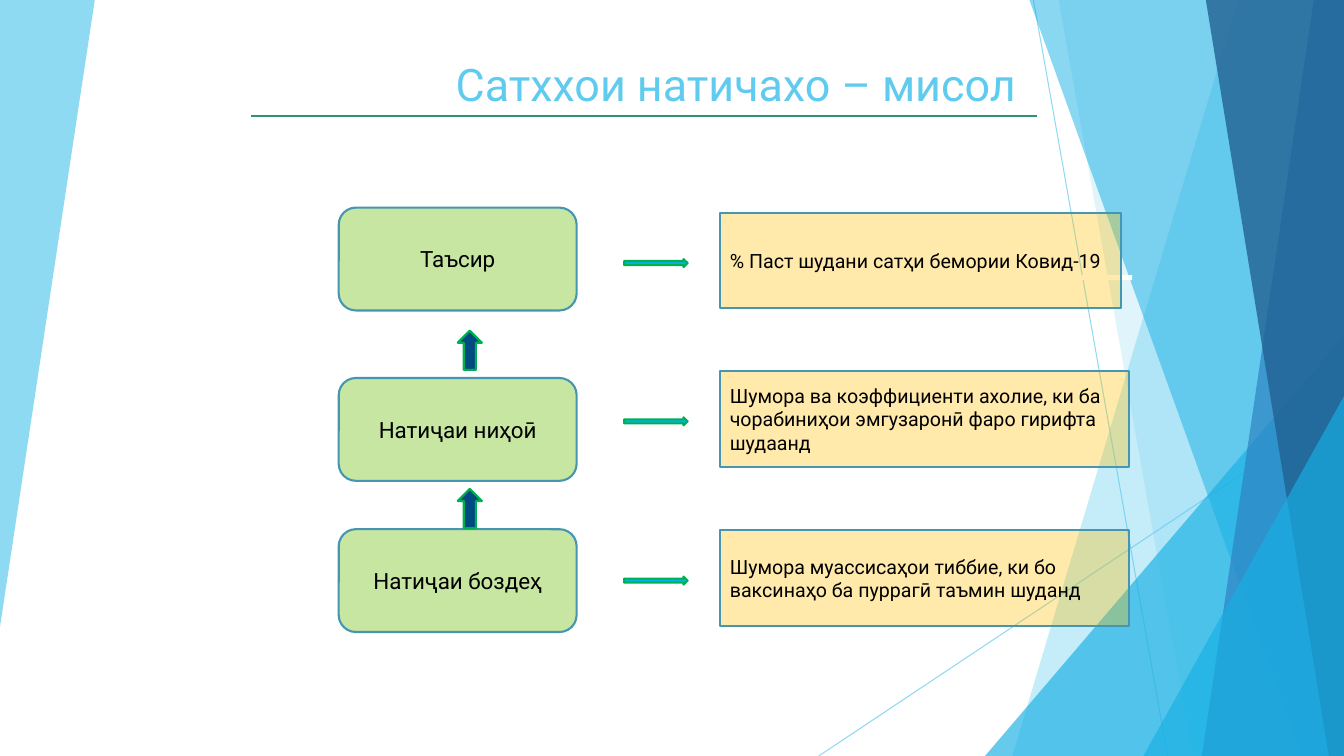
from pptx import Presentation
from pptx.dml.color import RGBColor
from pptx.enum.shapes import MSO_CONNECTOR as Connector, MSO_SHAPE as Shape
from pptx.enum.text import MSO_ANCHOR as Anchor, PP_ALIGN as Align
from pptx.oxml.ns import qn
from pptx.oxml.xmlchemy import OxmlElement
from pptx.util import Pt

PX = 9144
WIDTH, HEIGHT = 1333, 750
FONT = "Roboto"
SKY, AQUA, BLUE, NAVY = "5FCBEF", "17B0E4", "2E83C3", "226292"
STEEL, GREEN = "4696B1", "00B050"

LEVELS = [
    ("Таъсир", 206, "% Паст шудани сатҳи бемории Ковид-19", 211, 398),
    ("Натиҷаи ниҳоӣ", 375, "Шумора ва коэффициенти ахолие, ки ба чорабиниҳои "
     "эмгузаронӣ фаро гирифта шудаанд", 368, 406),
    ("Натиҷаи боздеҳ", 525, "Шумора муассисаҳои тиббие, ки бо ваксинаҳо ба "
     "пуррагӣ таъмин шуданд", 526, 406),
]


def px(*lengths):
    """Turn px lengths into EMU."""
    return [length * PX for length in lengths]


def color(value):
    """Turn a hex string into a colour."""
    return RGBColor.from_string(value)


def set_opacity(element, percent):
    """Make every colour below the element partly transparent."""
    for tint in element.iter(qn("a:srgbClr")):
        alpha = OxmlElement("a:alpha")
        alpha.set("val", str(percent * 1000))
        tint.append(alpha)


def paint(shape, fill, line=None, opacity=100):
    """Give a shape its fill, outline and opacity, without shadow."""
    shape.shadow.inherit = False
    shape.fill.solid()
    shape.fill.fore_color.rgb = color(fill)
    if opacity < 100:
        set_opacity(shape.element.spPr, opacity)
    if line:
        shape.line.color.rgb = color(line)
        shape.line.width = Pt(1.5)
    else:
        shape.line.fill.background()


def add_block(page, kind, box, fill, line=None, opacity=100):
    """Add a painted preset shape in a box."""
    block = page.shapes.add_shape(kind, *px(*box))
    paint(block, fill, line, opacity)
    return block


def add_facet(page, points, fill, opacity):
    """Add a see-through polygon."""
    builder = page.shapes.build_freeform(*points[0], scale=PX)
    builder.add_line_segments(points[1:], close=True)
    paint(builder.convert_to_shape(), fill, opacity=opacity)


def add_wedge(page, left, top, opacity=66):
    """Add a right triangle that fills the lower right corner."""
    box = left, top, WIDTH - left, HEIGHT - top
    wedge = add_block(page, Shape.ISOSCELES_TRIANGLE, box, AQUA, opacity=opacity)
    wedge.adjustments[0] = 1


def add_line(page, ends, line, width, opacity=100):
    """Add a straight line between two points."""
    rule = page.shapes.add_connector(Connector.STRAIGHT, *px(*ends))
    rule.line.color.rgb = color(line)
    rule.line.width = Pt(width)
    if opacity < 100:
        set_opacity(rule.element.spPr, opacity)
    rule.element.spPr.append(OxmlElement("a:effectLst"))


def write(shape, text, size, ink, align, anchor=Anchor.MIDDLE):
    """Write one wrapped paragraph into a shape."""
    frame = shape.text_frame
    frame.word_wrap = True
    frame.vertical_anchor = anchor
    para = frame.paragraphs[0]
    para.text = text
    para.alignment = align
    para.font.name = FONT
    para.font.size = Pt(size)
    para.font.color.rgb = color(ink)


def add_backdrop(page):
    """Draw the facets along both sides of the page."""
    def right_band(top, bottom, fill, opacity):
        corners = [(top, 0), (WIDTH, 0), (WIDTH, HEIGHT), (bottom, HEIGHT)]
        add_facet(page, corners, fill, opacity)

    add_facet(page, [(0, 0), (94, 0), (0, 622)], SKY, 70)
    add_line(page, (1025, 0, 1158, HEIGHT), SKY, 0.75, 70)
    add_line(page, (WIDTH, 403, 812, HEIGHT), SKY, 0.75, 70)
    right_band(1228, 1004, SKY, 36)
    right_band(1050, 1183, SKY, 20)
    add_wedge(page, 977, 333)
    right_band(1021, 1291, AQUA, 50)
    right_band(1303, 1192, BLUE, 70)
    right_band(1196, 1318, NAVY, 80)
    add_wedge(page, 1134, 393)


def add_title(page, left, top, width, height):
    """Add the title with the rule below it."""
    title = page.shapes.add_textbox(*px(left, top, width, height))
    title.text_frame.margin_right = 21 * PX
    write(title, "Сатххои натичахо – мисол", 32, SKY, Align.RIGHT, Anchor.BOTTOM)
    base = top + height
    add_line(page, (left + 12, base, left + width, base), "2E946B", 1)


def add_levels(page, left):
    """Add the result levels, their examples and the arrows between."""
    add_block(page, Shape.RECTANGLE, (left - 16, 273, 803, 5), "FFFFFF")
    for name, name_top, example, example_top, example_width in LEVELS:
        level = add_block(page, Shape.ROUNDED_RECTANGLE,
                          (left, name_top, 236, 102), "C6E6A2", STEEL)
        write(level, name, 16, "000000", Align.CENTER)
        note = add_block(page, Shape.RECTANGLE,
                         (left + 378, example_top, example_width, 95),
                         "FFC000", STEEL, 33)
        write(note, example, 14, "000000", Align.LEFT)
        add_block(page, Shape.RIGHT_ARROW,
                  (left + 283, example_top + 46, 63, 8), "00B0F0", GREEN)
    for top in (328, 485):
        add_block(page, Shape.UP_ARROW, (left + 118, top, 24, 39), "004A82", GREEN)


def main():
    """Build and save the deck."""
    deck = Presentation()
    deck.slide_width, deck.slide_height = px(WIDTH, HEIGHT)
    page = deck.slides.add_slide(deck.slide_layouts[6])
    add_backdrop(page)
    add_title(page, 237, 5, 792, 110)
    add_levels(page, 336)
    deck.save("out.pptx")


if __name__ == "__main__":
    main()
